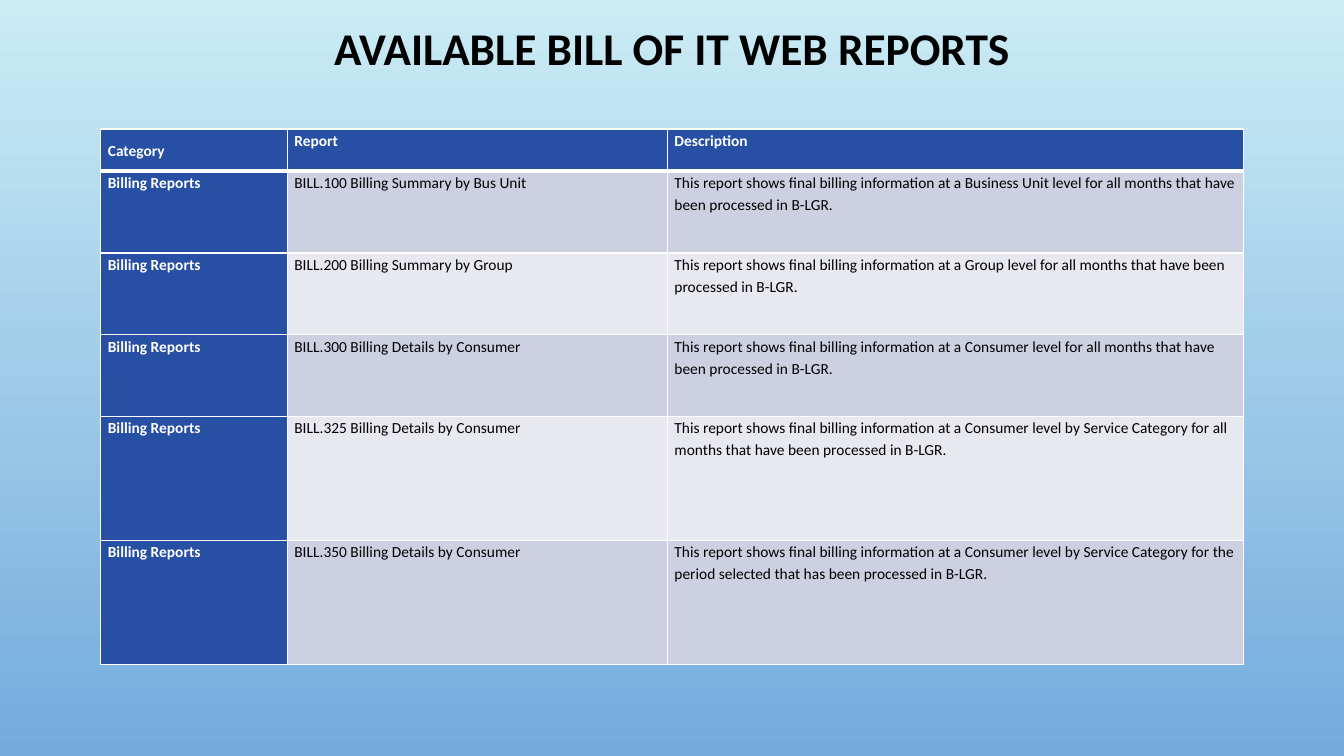
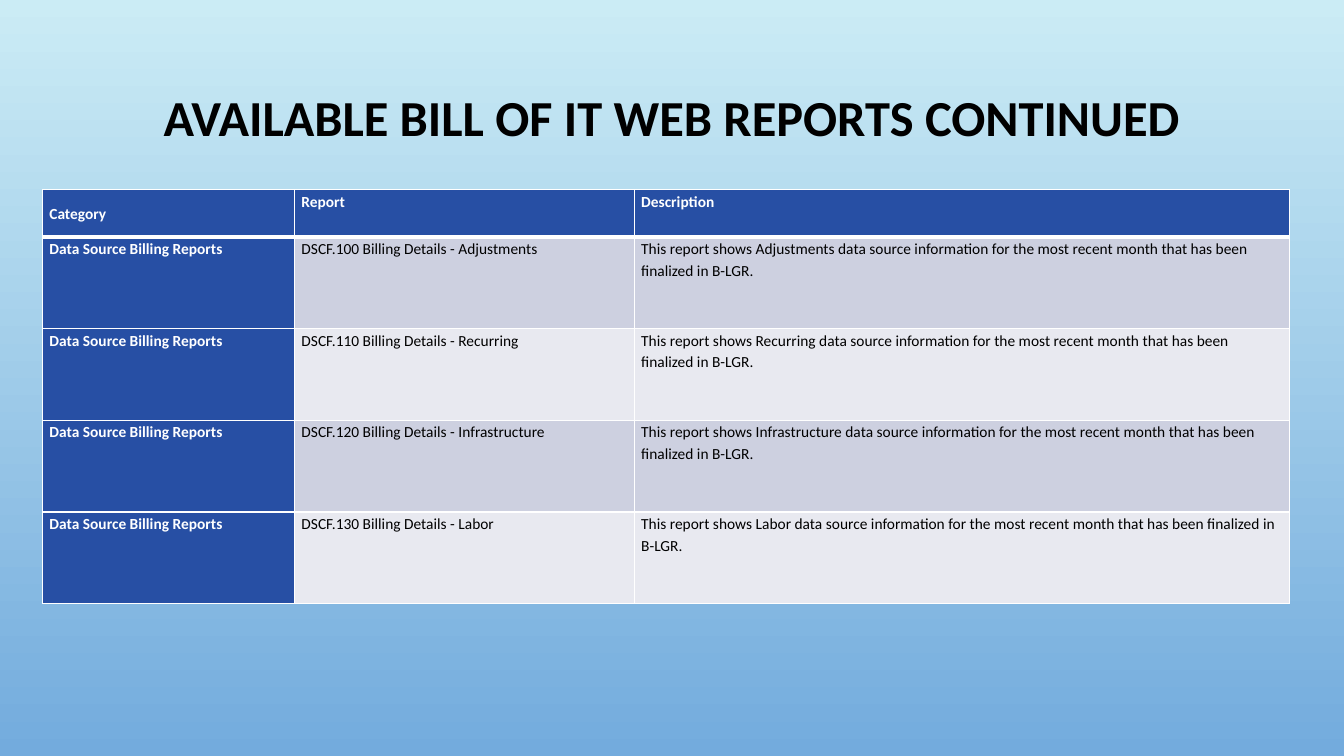
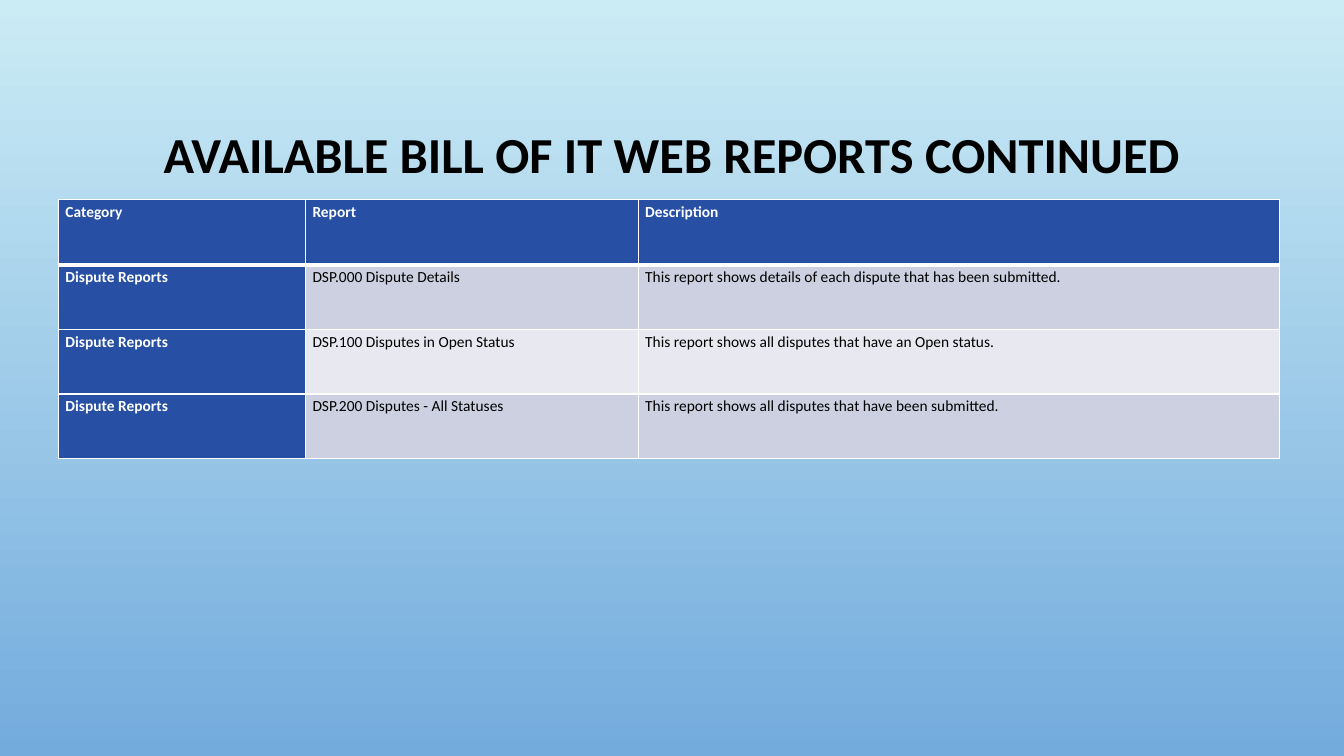
from lxml.etree import SubElement
from pptx import Presentation
from pptx.dml.color import RGBColor
from pptx.enum.text import MSO_ANCHOR, PP_ALIGN
from pptx.oxml.ns import qn
from pptx.util import Inches, Pt


def color(value):
    """Turn a hex string into a colour."""
    return RGBColor.from_string(value)


def write(frame, text, size, ink, bold=False, align=PP_ALIGN.LEFT, spacing=1.0, font="Calibri"):
    """Put formatted text into the first paragraph of a text frame."""
    frame.word_wrap = True
    para = frame.paragraphs[0]
    para.alignment = align
    para.line_spacing = spacing
    span = para.add_run()
    span.text = text
    span.font.name = font
    span.font.size = Pt(size)
    span.font.bold = bold
    span.font.color.rgb = color(ink)


class ReportDeck:
    """Shared style and the current page of the report deck."""

    SKY, BLUE = "CBECF5", "73ABDD"
    NAVY, WHITE, BLACK = "274FA4", "FFFFFF", "000000"
    BANDS = ("CDD0E0", "E8E9F0")
    HEADINGS = ("Category", "Report", "Description")

    def __init__(self):
        """Open a wide deck with a gradient behind every page."""
        self.deck = Presentation()
        self.deck.slide_width = Inches(13.33)
        self.deck.slide_height = Inches(7.5)
        self.page = None
        fill = self.deck.slide_master.background.fill
        fill.gradient()
        fill.gradient_angle = 270
        for stop, value in zip(fill.gradient_stops, (self.SKY, self.BLUE)):
            stop.color.rgb = color(value)

    def add_page(self):
        """Start a new blank page."""
        self.page = self.deck.slides.add_slide(self.deck.slide_layouts[6])

    def title(self, text, left, top, width, height, size=36, anchor=MSO_ANCHOR.MIDDLE):
        """Add a centred bold title."""
        box = self.page.shapes.add_textbox(*map(Inches, (left, top, width, height)))
        box.text_frame.vertical_anchor = anchor
        write(box.text_frame, text, size, self.BLACK, bold=True,
              align=PP_ALIGN.CENTER, spacing=0.9)

    def border(self, cell, top, bottom):
        """Draw white borders around a cell, with top and bottom widths in points."""
        properties = cell._tc.get_or_add_tcPr()
        for side, width in (("L", 1), ("R", 1), ("T", top), ("B", bottom)):
            line = SubElement(properties, qn(f"a:ln{side}"), w=str(Pt(width)))
            fill = SubElement(line, qn("a:solidFill"))
            SubElement(fill, qn("a:srgbClr"), val=self.WHITE)

    def cell(self, cell, text, row, column):
        """Style and fill one table cell according to its place."""
        label = row == 0 or column == 0
        self.border(cell, top=3 if row == 1 else 1, bottom=3 if row == 0 else 1)
        cell.fill.solid()
        cell.fill.fore_color.rgb = color(self.NAVY if label else self.BANDS[(row - 1) % 2])
        cell.margin_left = cell.margin_right = Inches(0.07)
        cell.margin_top = cell.margin_bottom = 0
        write(cell.text_frame, text, 11, self.WHITE if label else self.BLACK,
              bold=label, spacing=1.15)

    def table(self, left, top, widths, heights, category, reports, anchor=MSO_ANCHOR.MIDDLE):
        """Add a report table; anchor places the first heading."""
        rows = [self.HEADINGS] + [(category, *report) for report in reports]
        frame = self.page.shapes.add_table(
            len(rows), len(widths), Inches(left), Inches(top),
            Inches(sum(widths)), Inches(sum(heights)))
        table = frame.table
        for column, width in zip(table.columns, widths):
            column.width = Inches(width)
        for r, (values, height) in enumerate(zip(rows, heights)):
            table.rows[r].height = Inches(height)
            for c, value in enumerate(values):
                self.cell(table.cell(r, c), value, r, c)
        table.cell(0, 0).vertical_anchor = anchor


def main():
    """Build the three report pages."""
    heading = "AVAILABLE BILL OF IT WEB REPORTS"
    continued = f"{heading} CONTINUED"
    billing = "This report shows final billing information at a"
    processed = "for all months that have been processed in B-LGR."
    report = ReportDeck()

    report.add_page()
    report.title(heading, 1.25, 0.21, 10.83, 1.07, size=32.4, anchor=MSO_ANCHOR.TOP)
    report.table(1, 1.28, (1.85, 3.77, 5.71), [0.42] + [0.81] * 3 + [1.23] * 2,
                 "Billing Reports", (
        ("BILL.100 Billing Summary by Bus Unit", f"{billing} Business Unit level {processed}"),
        ("BILL.200 Billing Summary by Group", f"{billing} Group level {processed}"),
        ("BILL.300 Billing Details by Consumer", f"{billing} Consumer level {processed}"),
        ("BILL.325 Billing Details by Consumer",
         f"{billing} Consumer level by Service Category {processed}"),
        ("BILL.350 Billing Details by Consumer",
         f"{billing} Consumer level by Service Category for the period selected "
         "that has been processed in B-LGR."),
    ))

    report.add_page()
    report.title(continued, 1.25, 0.68, 10.83, 1.03)
    sources = ("Adjustments", "Recurring", "Infrastructure", "Labor")
    report.table(0.42, 1.88, (2.5, 3.37, 6.5), [0.47] + [0.91] * 4,
                 "Data Source Billing Reports", [
        (f"DSCF.{number} Billing Details - {source}",
         f"This report shows {source} data source information for the most recent month "
         "that has been finalized in B-LGR.")
        for number, source in zip(range(100, 140, 10), sources)
    ])

    report.add_page()
    report.title(continued, 1, 0.68, 11.33, 1.75)
    report.table(0.58, 1.98, (2.45, 3.3, 6.36), [0.65] + [0.64] * 3, "Dispute Reports", (
        ("DSP.000 Dispute Details",
         "This report shows details of each dispute that has been submitted."),
        ("DSP.100 Disputes in Open Status",
         "This report shows all disputes that have an Open status."),
        ("DSP.200 Disputes - All Statuses",
         "This report shows all disputes that have been submitted."),
    ), anchor=MSO_ANCHOR.TOP)

    report.deck.save("out.pptx")


if __name__ == "__main__":
    main()
